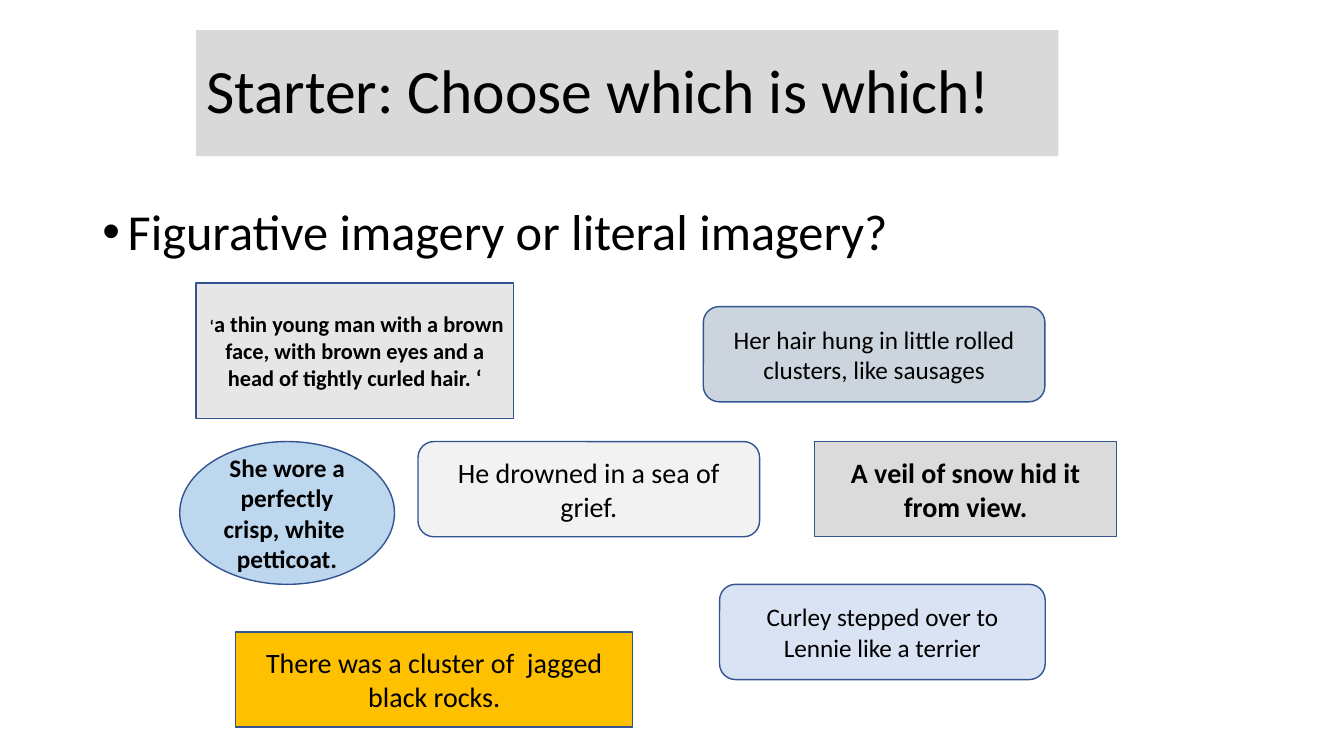
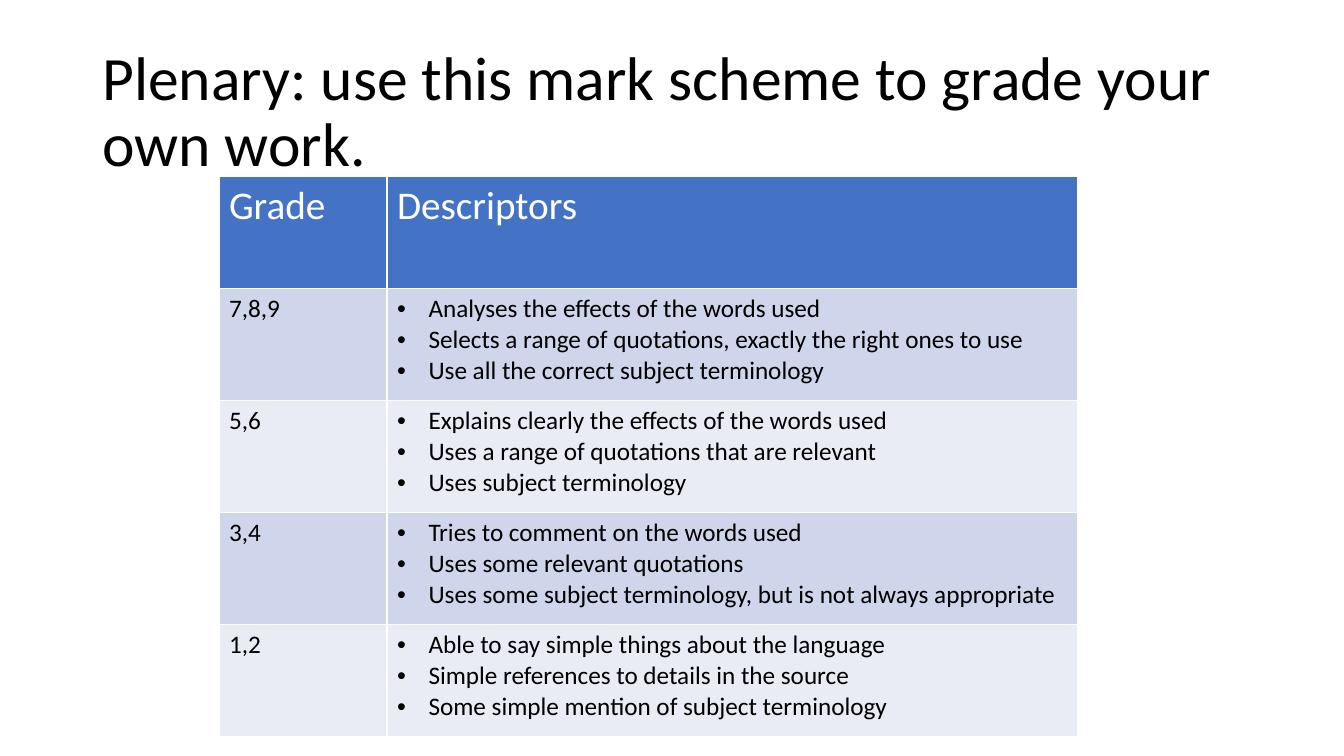
from lxml import etree
from pptx import Presentation
from pptx.dml.color import RGBColor
from pptx.enum import shapes, text
from pptx.oxml import ns
from pptx.util import Pt

FONT = "Calibri"
BLACK, WHITE, OUTLINE = "000000", "FFFFFF", "325491"
TITLE_GREY, HEADER_BLUE = "D9D9D9", "4472C4"
BANDS = ("CFD5EA", "E9EBF5")
LEFT, CONTENT_WIDTH = 66, 828

RECTANGLE = shapes.MSO_SHAPE.RECTANGLE
ROUNDED = shapes.MSO_SHAPE.ROUNDED_RECTANGLE
OVAL = shapes.MSO_SHAPE.OVAL

STARTER_TITLE = "Starter: Choose which is which!"
STARTER_QUESTION = "Figurative imagery or literal imagery?"
PLENARY_TITLE = "Plenary: use this mark scheme to grade your own work."

# preset, (left, top, width, height), fill, bold, runs of (wording, size)
QUOTES = [
    (RECTANGLE, (140, 202.2, 227, 96.6), "E7E6E6", True,
     [(" ‘", 12), ("a thin young man with a brown face, with brown eyes "
                   "and a head of tightly curled hair. ‘", 16)]),
    (ROUNDED, (502.4, 219, 244, 68), "CCD4DE", False,
     [("Her hair hung in little rolled clusters, like sausages", 18)]),
    (ROUNDED, (298.6, 315.4, 244, 68), "F2F2F2", False,
     [("He drowned in a sea of grief.", 20)]),
    (ROUNDED, (514, 417.4, 232.6, 68), "DAE3F3", False,
     [("Curley stepped over to Lennie like a terrier", 18)]),
    (RECTANGLE, (168.4, 451.4, 283.6, 68), "FFC000", False,
     [("There was a cluster of  jagged black rocks.", 20)]),
    (RECTANGLE, (582, 315.4, 215.4, 68), "DBDBDB", True,
     [("A veil of snow hid it from view.", 20)]),
    (OVAL, (128.4, 315.4, 153.4, 102), "BDD7EE", True,
     [("She wore a perfectly crisp, white  petticoat.", 18)]),
]

TABLE_BOX = (156.4, 126.2, 613.2, 400)
GRADE_WIDTH = 120
HEADERS = ("Grade", "Descriptors")
MARK_SCHEME = [
    ("7,8,9", ["Analyses the effects of the words used",
               "Selects a range of quotations, exactly the right ones to use",
               "Use all the correct subject terminology"]),
    ("5,6", ["Explains clearly the effects of the words used",
             "Uses a range of quotations that are relevant",
             "Uses subject terminology"]),
    ("3,4", ["Tries to comment on the words used",
             "Uses some relevant quotations",
             "Uses some subject terminology, but is not always appropriate"]),
    ("1,2", ["Able to say simple things about the language",
             "Simple references to details in the source",
             "Some simple mention of subject terminology"]),
]


def rgb(value):
    return RGBColor.from_string(value)


def points(box):
    return [Pt(length) for length in box]


def fill(target, color):
    target.fill.solid()
    target.fill.fore_color.rgb = rgb(color)


def style(run, size, color=BLACK, bold=False):
    run.font.name = FONT
    run.font.size = Pt(size)
    run.font.bold = bold
    run.font.color.rgb = rgb(color)


def add_bullet(paragraph, indent):
    properties = paragraph._p.get_or_add_pPr()
    properties.set("marL", str(Pt(indent)))
    properties.set("indent", str(-Pt(indent)))
    etree.SubElement(properties, ns.qn("a:buFont")).set("typeface", "Arial")
    etree.SubElement(properties, ns.qn("a:buChar")).set("char", "•")


def fill_placeholder(placeholder, box, wording, size, anchor):
    """Place a title or body placeholder and return its only paragraph."""
    placeholder.left, placeholder.top, placeholder.width, placeholder.height = points(box)
    frame = placeholder.text_frame
    frame.text = wording
    frame.auto_size = text.MSO_AUTO_SIZE.NONE
    frame.vertical_anchor = anchor
    paragraph = frame.paragraphs[0]
    paragraph.alignment = text.PP_ALIGN.LEFT
    paragraph.line_spacing = 0.9
    paragraph.space_before = Pt(0)
    style(paragraph.runs[0], size)
    return paragraph


def add_slide(presentation, layout, title, title_box):
    slide = presentation.slides.add_slide(presentation.slide_layouts[layout])
    fill_placeholder(slide.shapes.title, title_box, title, 44, text.MSO_ANCHOR.MIDDLE)
    return slide


def add_quote(slide, preset, box, color, bold, runs):
    shape = slide.shapes.add_shape(preset, *points(box))
    shape.shadow.inherit = False
    fill(shape, color)
    shape.line.color.rgb = rgb(OUTLINE)
    shape.line.width = Pt(1)
    frame = shape.text_frame
    frame.word_wrap = True
    frame.vertical_anchor = text.MSO_ANCHOR.MIDDLE
    paragraph = frame.paragraphs[0]
    paragraph.alignment = text.PP_ALIGN.CENTER
    for wording, size in runs:
        run = paragraph.add_run()
        run.text = wording
        style(run, size, bold=bold)


def fill_cell(cell, lines, size, text_color, back_color, bulleted=False):
    fill(cell, back_color)
    cell.text_frame.text = "\n".join(lines)
    for paragraph in cell.text_frame.paragraphs:
        if bulleted:
            add_bullet(paragraph, 22.5)
        style(paragraph.runs[0], size, text_color)


def add_mark_scheme(slide):
    rows = len(MARK_SCHEME) + 1
    table = slide.shapes.add_table(rows, len(HEADERS), *points(TABLE_BOX)).table
    table.columns[0].width = Pt(GRADE_WIDTH)
    table.columns[1].width = Pt(TABLE_BOX[2] - GRADE_WIDTH)
    for column, header in enumerate(HEADERS):
        fill_cell(table.cell(0, column), [header], 28, WHITE, HEADER_BLUE)
    for row, (grade, descriptors) in enumerate(MARK_SCHEME, 1):
        band = BANDS[(row - 1) % 2]
        fill_cell(table.cell(row, 0), [grade], 18, BLACK, band)
        fill_cell(table.cell(row, 1), descriptors, 18, BLACK, band, bulleted=True)


def main():
    presentation = Presentation()
    presentation.slide_width, presentation.slide_height = Pt(960), Pt(540)

    starter = add_slide(presentation, 1, STARTER_TITLE, (140, 21.6, 616, 90))
    fill(starter.shapes.title, TITLE_GREY)
    question = fill_placeholder(starter.placeholders[1], (LEFT, 144, CONTENT_WIDTH, 342),
                                STARTER_QUESTION, 36, text.MSO_ANCHOR.TOP)
    add_bullet(question, 18)
    for quote in QUOTES:
        add_quote(starter, *quote)

    plenary = add_slide(presentation, 5, PLENARY_TITLE, (LEFT, 28.8, CONTENT_WIDTH, 104.4))
    add_mark_scheme(plenary)

    presentation.save("out.pptx")


if __name__ == "__main__":
    main()
